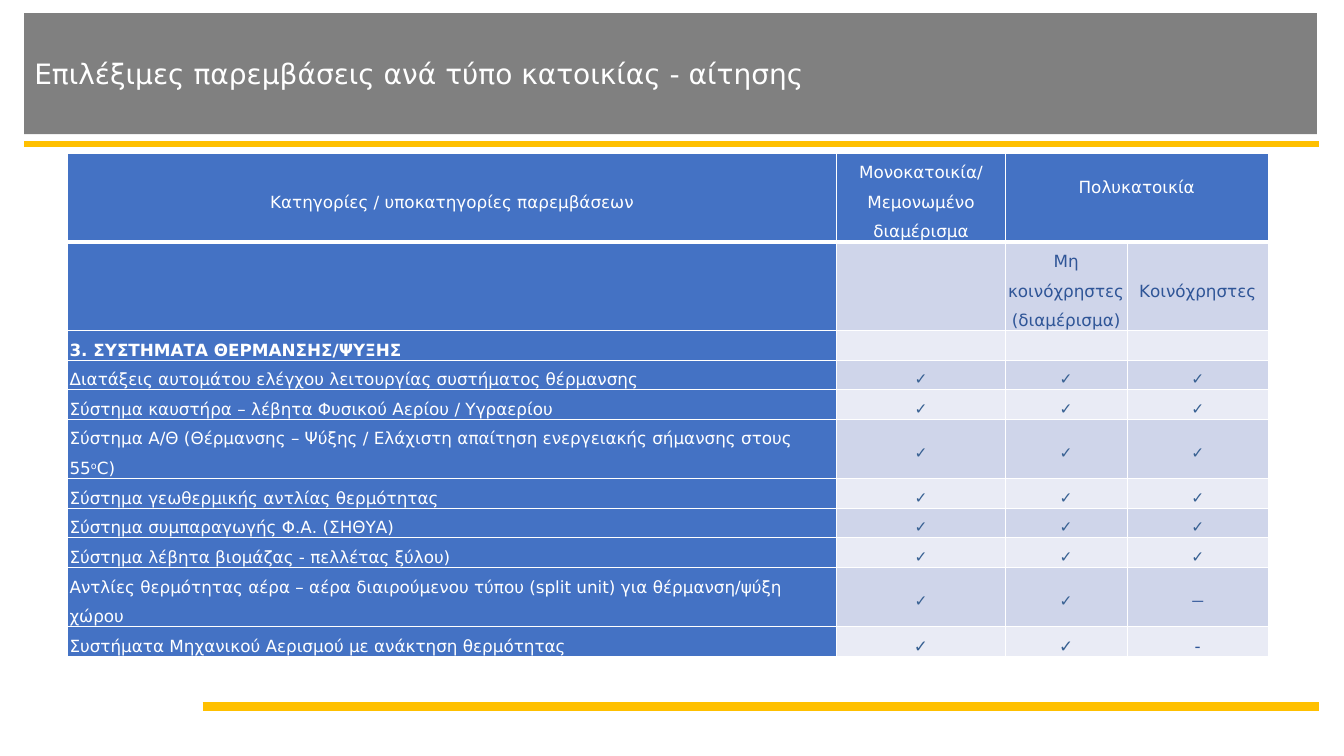
import pptx
import pptx.util
import pptx.dml.color
import pptx.enum.shapes
import pptx.enum.text
import pptx.oxml
import pptx.oxml.ns
from pptx.util import Inches

WHITE, GRAY, GOLD = "FFFFFF", "808080", "FFC000"
BLUE, DARK_BLUE, TICK_BLUE = "4472C4", "2F5597", "376092"
BANDS = ["E9EBF5", "CFD5EA"]
ALIGN = pptx.enum.text.PP_ALIGN
MIDDLE = pptx.enum.text.MSO_ANCHOR.MIDDLE

COLUMNS = [7.63, 1.67, 1.21, 1.4]
ROWS = [0.88, 0.88, 0.29, 0.29, 0.29, 0.59, 0.29, 0.29, 0.29, 0.59, 0.29]
HEADERS = [
    ["Κατηγορίες / υποκατηγορίες παρεμβάσεων"],
    ["Μονοκατοικία/", "Μεμονωμένο διαμέρισμα"],
    ["Πολυκατοικία"],
]
SUBHEADERS = ["", "Μη κοινόχρηστες (διαμέρισμα)", "Κοινόχρηστες"]
SECTION = "3. ΣΥΣΤΗΜΑΤΑ ΘΕΡΜΑΝΣΗΣ/ΨΥΞΗΣ"
MEASURES = [
    (["Διατάξεις αυτομάτου ελέγχου λειτουργίας συστήματος θέρμανσης"], "✓✓✓"),
    (["Σύστημα καυστήρα – λέβητα Φυσικού Αερίου / Υγραερίου"], "✓✓✓"),
    (["Σύστημα Α/Θ (Θέρμανσης – Ψύξης / Ελάχιστη απαίτηση ενεργειακής "
      "σήμανσης στους 55", "o", "C)"], "✓✓✓"),
    (["Σύστημα γεωθερμικής αντλίας θερμότητας"], "✓✓✓"),
    (["Σύστημα συμπαραγωγής Φ.Α. (ΣΗΘΥΑ)"], "✓✓✓"),
    (["Σύστημα λέβητα βιομάζας - πελλέτας ξύλου)"], "✓✓✓"),
    (["Αντλίες θερμότητας αέρα – αέρα διαιρούμενου τύπου (split unit) "
      "για θέρμανση/ψύξη χώρου"], "✓✓─"),
    (["Συστήματα Μηχανικού Αερισμού με ανάκτηση θερμότητας"], "✓✓-"),
]


def rgb(color):
    """Turn a hex string into a colour."""
    return pptx.dml.color.RGBColor.from_string(color)


def add_text(p, text, size=12, font="DejaVu Sans", color=WHITE, bold=False,
             align=ALIGN.LEFT, spacing=1.5, after=0, superscript=False):
    """Add a formatted run to a paragraph."""
    p.alignment = align
    p.line_spacing = spacing
    p.space_before = pptx.util.Pt(0)
    p.space_after = pptx.util.Pt(after)
    r = p.add_run()
    r.text = text
    r.font.size = pptx.util.Pt(size)
    r.font.name = font
    r.font.bold = bold
    r.font.color.rgb = rgb(color)
    if superscript:
        r.font._element.set("baseline", "30000")


def add_rule(s, left, top, right, width):
    """Draw a horizontal gold rule."""
    line = s.shapes.add_connector(
        pptx.enum.shapes.MSO_CONNECTOR.STRAIGHT,
        Inches(left), Inches(top), Inches(right), Inches(top))
    line.line.color.rgb = rgb(GOLD)
    line.line.width = pptx.util.Pt(width)
    line._element.spPr.append(pptx.oxml.parse_xml(
        f'<a:effectLst {pptx.oxml.ns.nsdecls("a")}/>'))


def set_title(s, text):
    """Place and format the title band."""
    sp = s.shapes.title
    sp.left, sp.top = Inches(0.24), Inches(0.13)
    sp.width, sp.height = Inches(12.82), Inches(1.2)
    sp.fill.solid()
    sp.fill.fore_color.rgb = rgb(GRAY)
    tf = sp.text_frame
    tf.auto_size = pptx.enum.text.MSO_AUTO_SIZE.NONE
    tf.vertical_anchor = MIDDLE
    add_text(tf.paragraphs[0], text, size=20, spacing=1)


def style_cell(cell, row, col):
    """Set the margins, borders and fill of a cell."""
    cell.vertical_anchor = MIDDLE
    cell.margin_left = cell.margin_right = Inches(0.02)
    cell.margin_top = cell.margin_bottom = 0
    tc_pr = cell._tc.get_or_add_tcPr()
    widths = {"L": 1, "R": 1, "T": 1, "B": 3 if row == 0 else 1}
    if row == 1:
        del widths["T"]
    for side, width in widths.items():
        tc_pr.append(pptx.oxml.parse_xml(
            f'<a:ln{side} {pptx.oxml.ns.nsdecls("a")} w="{pptx.util.Pt(width)}">'
            f'<a:solidFill><a:srgbClr val="{WHITE}"/></a:solidFill></a:ln{side}>'))
    cell.fill.solid()
    cell.fill.fore_color.rgb = rgb(BLUE if row == 0 or col == 0 else BANDS[row % 2])
    cell.text_frame.paragraphs[0]._p.get_or_add_endParaRPr().set("sz", "1200")


def fill_headers(table):
    """Write the two header rows and the section name."""
    for col, lines in enumerate(HEADERS):
        tf = table.cell(0, col).text_frame
        for i, line in enumerate(lines):
            p = tf.add_paragraph() if i else tf.paragraphs[0]
            add_text(p, line, align=ALIGN.CENTER)
    table.cell(0, 2).merge(table.cell(0, 3))
    table.cell(0, 2).margin_bottom = Inches(0.3)
    for col, text in enumerate(SUBHEADERS, start=1):
        if text:
            add_text(table.cell(1, col).text_frame.paragraphs[0], text,
                     color=DARK_BLUE, align=ALIGN.CENTER, after=4)
    add_text(table.cell(2, 0).text_frame.paragraphs[0], SECTION, bold=True)


def fill_measures(table):
    """Write one row for each measure with its marks."""
    for row, (parts, marks) in enumerate(MEASURES, start=3):
        p = table.cell(row, 0).text_frame.paragraphs[0]
        for i, part in enumerate(parts):
            add_text(p, part, superscript=i == 1)
        last = row == len(ROWS) - 1
        for col, mark in enumerate(marks, start=1):
            add_text(table.cell(row, col).text_frame.paragraphs[0], mark,
                     size=12 if last else 11,
                     font="DejaVu Sans" if last else "Arial",
                     color=TICK_BLUE if mark == "✓" else DARK_BLUE,
                     align=ALIGN.CENTER, after=4)


def add_measures_table(s):
    """Add the table of eligible measures."""
    table = s.shapes.add_table(
        len(ROWS), len(COLUMNS), Inches(0.67), Inches(1.52),
        Inches(sum(COLUMNS)), Inches(sum(ROWS))).table
    table.first_row = table.horz_banding = False
    for col, width in enumerate(COLUMNS):
        table.columns[col].width = Inches(width)
    for row, height in enumerate(ROWS):
        table.rows[row].height = Inches(height)
        for col in range(len(COLUMNS)):
            style_cell(table.cell(row, col), row, col)
    fill_headers(table)
    fill_measures(table)


def main():
    """Build and save the slide."""
    prs = pptx.Presentation()
    prs.slide_width, prs.slide_height = Inches(13.33), Inches(7.5)
    s = prs.slides.add_slide(prs.slide_layouts[5])
    add_rule(s, 0.24, 1.43, 13.08, 4.5)
    add_rule(s, 2.01, 7.01, 13.08, 6)
    set_title(s, "Επιλέξιμες παρεμβάσεις ανά τύπο κατοικίας - αίτησης")
    add_measures_table(s)
    prs.save("out.pptx")


if __name__ == "__main__":
    main()
